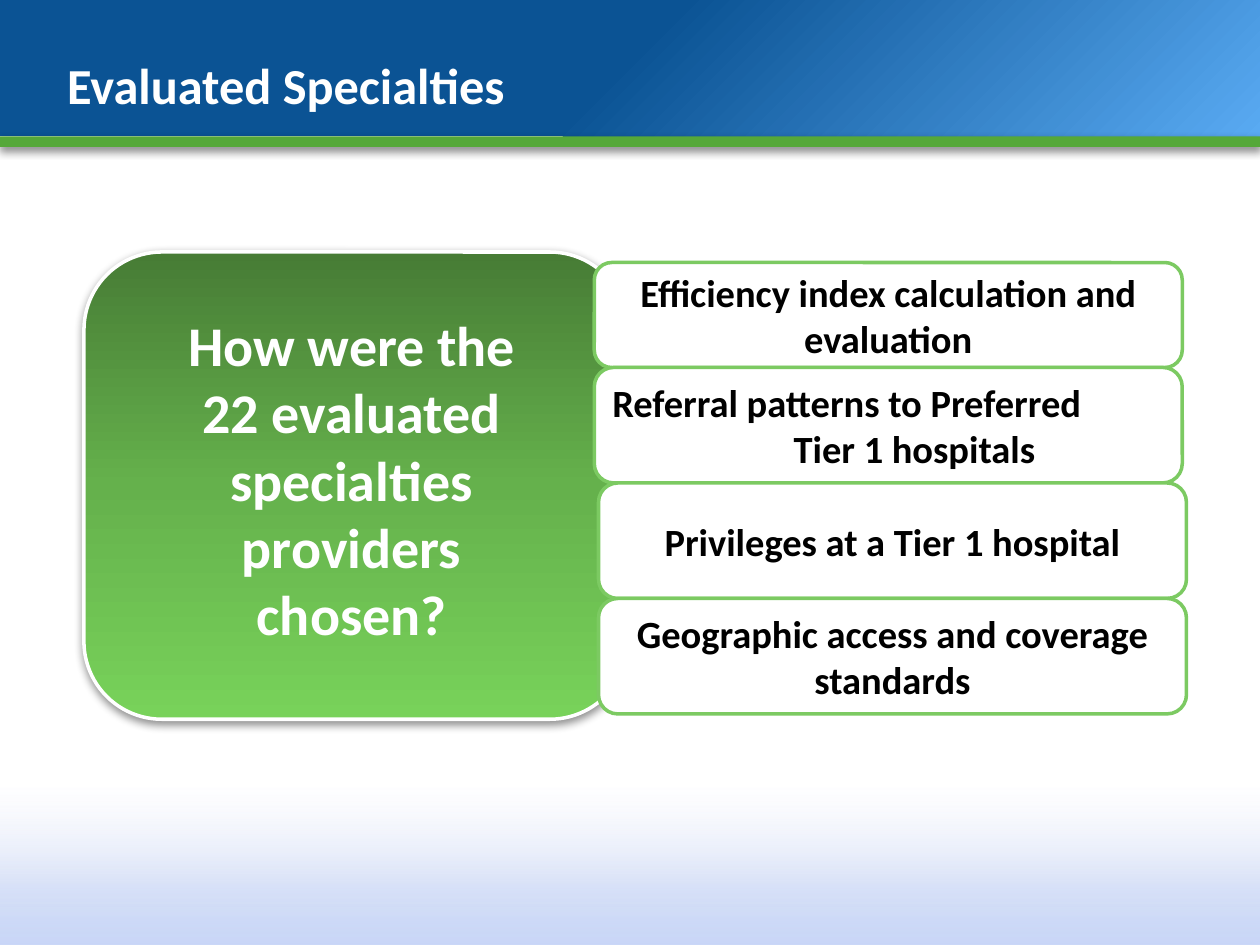
"""Build the slide on how evaluated specialties were chosen."""
from dataclasses import dataclass
from typing import Optional

from pptx import Presentation, util as u
from pptx.dml.color import RGBColor
from pptx.enum import shapes as s, text as t
from pptx.oxml import parse_xml
from pptx.oxml.ns import nsdecls, qn

WHITE = RGBColor(0xFF, 0xFF, 0xFF)
BLACK = RGBColor(0x00, 0x00, 0x00)
SKY = RGBColor(0x59, 0xAA, 0xF2)
NAVY = RGBColor(0x0B, 0x53, 0x94)
GREEN = RGBColor(0x55, 0xA8, 0x39)
EDGE = RGBColor(0x7C, 0xCA, 0x62)
DARK = RGBColor(0x47, 0x7C, 0x35)
LEAF = RGBColor(0x65, 0xB1, 0x4C)
LIME = RGBColor(0x78, 0xD2, 0x5A)
MIST = RGBColor(0x8E, 0xAB, 0xEE)
HAZE = RGBColor(0xBB, 0xCB, 0xF2)
PALE = RGBColor(0xDE, 0xE5, 0xF8)

UNIT = u.Inches(1) // 12
COLS, ROWS = 120, 90
RECT = s.MSO_SHAPE.RECTANGLE
ROUND = s.MSO_SHAPE.ROUNDED_RECTANGLE
LEFT, MID = t.PP_ALIGN.LEFT, t.PP_ALIGN.CENTER


@dataclass(frozen=True)
class Area:
    """Place on the grid, in columns and rows."""
    col: float
    row: float
    wide: float
    high: float

    def emu(self) -> list[int]:
        """Give left, top, width and height in EMU."""
        return [round(n * UNIT) for n in (self.col, self.row, self.wide, self.high)]


@dataclass(frozen=True)
class Stop:
    """Gradient stop; place and opacity in percent."""
    at: int
    color: RGBColor
    alpha: int = 100


@dataclass(frozen=True)
class Line:
    """One paragraph of text, indented in columns."""
    words: str
    align: t.PP_ALIGN = MID
    indent: float = 0


@dataclass(frozen=True)
class Card:
    """One reason, with its place on the grid."""
    area: Area
    lines: tuple[Line, ...]


BANDS = Area(0, 0, COLS, 13), Area(0, 13, COLS, 1), Area(0, 75, COLS, 15)
CARDS = (
    Card(Area(56.6, 25, 56, 10), (Line("Efficiency index calculation and evaluation"),)),
    Card(Area(56.6, 35, 56, 11), (Line("Referral patterns to Preferred", LEFT),
                                  Line("Tier 1 hospitals", MID, 5))),
    Card(Area(57, 46, 56, 11), (Line("Privileges at a Tier 1 hospital"),)),
    Card(Area(57, 57, 56, 11), (Line("Geographic access and coverage standards"),)),
)


def block(slide, area: Area, kind=RECT, color: Optional[RGBColor] = None,
          edge: Optional[RGBColor] = None):
    """Add a flat shape with an optional fill and edge."""
    shape = slide.shapes.add_shape(kind, *area.emu())
    shape.shadow.inherit = False
    if color is not None:
        shape.fill.solid()
        shape.fill.fore_color.rgb = color
    if edge is None:
        shape.line.fill.background()
    else:
        shape.line.color.rgb = edge
        shape.line.width = u.Pt(2)
    return shape


def blend(shape, stops: tuple[Stop, ...], angle: Optional[int] = None) -> None:
    """Fill with a linear gradient, or a round one from the lower right."""
    marks = "".join(
        f'<a:gs pos="{x.at * 1000}"><a:srgbClr val="{x.color}">'
        f'<a:alpha val="{x.alpha * 1000}"/></a:srgbClr></a:gs>' for x in stops)
    way = (f'<a:lin ang="{angle * 60000}" scaled="0"/>' if angle is not None else
           '<a:path path="circle"><a:fillToRect l="100000" t="100000"/></a:path>')
    shape._element.spPr.insert(2, parse_xml(
        f'<a:gradFill {nsdecls("a")} rotWithShape="1">'
        f'<a:gsLst>{marks}</a:gsLst>{way}</a:gradFill>'))


def shade(shape) -> None:
    """Drop a soft shadow straight below the shape."""
    shape._element.spPr.find(qn("a:effectLst")).append(parse_xml(
        f'<a:outerShdw {nsdecls("a")} blurRad="{u.Pt(5)}" dist="{u.Pt(2)}" '
        'dir="5400000" rotWithShape="0"><a:srgbClr val="000000">'
        '<a:alpha val="43000"/></a:srgbClr></a:outerShdw>'))


def write(shape, lines: tuple[Line, ...], size: float, color: RGBColor,
          anchor=t.MSO_ANCHOR.MIDDLE) -> None:
    """Write bold paragraphs into a shape."""
    frame = shape.text_frame
    frame.word_wrap = True
    frame.vertical_anchor = anchor
    for i, line in enumerate(lines):
        para = frame.add_paragraph() if i else frame.paragraphs[0]
        para.alignment = line.align
        if line.indent:
            para._p.get_or_add_pPr().set("marL", str(round(line.indent * UNIT)))
        run = para.add_run()
        run.text = line.words
        run.font.name = "Calibri"
        run.font.size = u.Pt(size)
        run.font.bold = True
        run.font.color.rgb = color


def main() -> None:
    """Draw the slide and save it."""
    deck = Presentation()
    deck.slide_width, deck.slide_height = COLS * UNIT, ROWS * UNIT
    slide = deck.slides.add_slide(deck.slide_layouts[6])

    head, rule, foot = BANDS
    blend(block(slide, head), (Stop(0, SKY), Stop(51, NAVY)))
    shade(block(slide, rule, color=GREEN))
    blend(block(slide, foot),
          (Stop(0, MIST, 48), Stop(37, HAZE, 57), Stop(100, PALE, 1)), 270)

    title = slide.shapes.add_textbox(*Area(4, 4, 81.4, 5).emu())
    frame = title.text_frame
    frame.margin_left = frame.margin_right = u.Inches(0.2)
    frame.margin_top, frame.margin_bottom = u.Inches(0.25), 0
    write(title, (Line("Evaluated Specialties", LEFT),), 28.8, WHITE)

    panel = block(slide, Area(8, 24, 51.8, 44.5), ROUND, edge=WHITE)
    blend(panel, (Stop(0, DARK), Stop(50, LEAF), Stop(100, LIME)), 90)
    shade(panel)
    ask = slide.shapes.add_textbox(*Area(15, 29, 37, 37.2).emu())
    write(ask, (Line("How were the 22 evaluated specialties providers chosen?"),),
          32, WHITE, t.MSO_ANCHOR.TOP)

    for card in CARDS:
        write(block(slide, card.area, ROUND, WHITE, EDGE), card.lines, 22, BLACK)
    deck.save("out.pptx")


if __name__ == "__main__":
    main()
